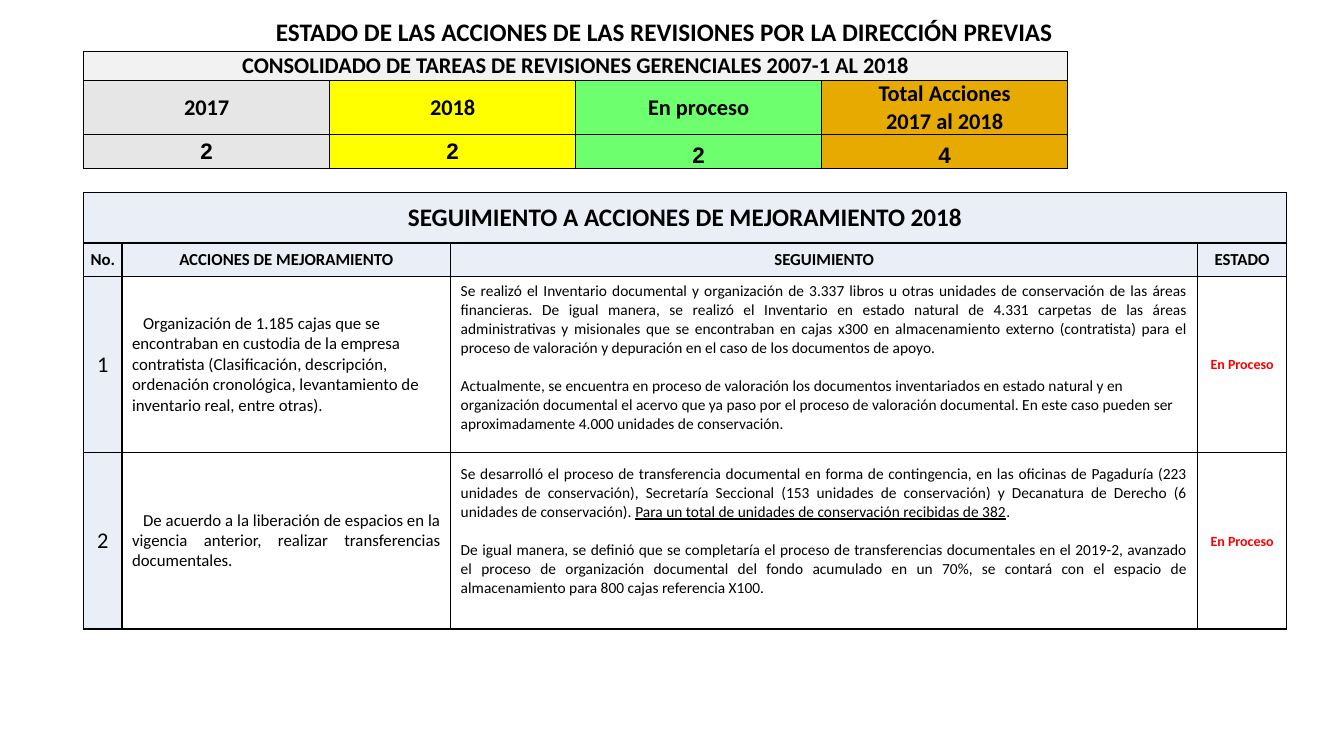
"""Build the slide on the state of actions from previous management reviews."""
from lxml import etree
from pptx import Presentation
from pptx.dml.color import RGBColor
from pptx.enum.text import MSO_ANCHOR, PP_ALIGN
from pptx.oxml.ns import qn
from pptx.util import Inches, Pt

CENTER, LEFT, JUSTIFY = PP_ALIGN.CENTER, PP_ALIGN.LEFT, PP_ALIGN.JUSTIFY
MIDDLE, BOTTOM = MSO_ANCHOR.MIDDLE, MSO_ANCHOR.BOTTOM
COLORS = {
    "black": "000000", "white": "FFFFFF", "red": "FF0000", "light": "F2F2F2",
    "gray": "E7E6E6", "yellow": "FFFF00", "green": "6DFF6D",
    "amber": "E6AA00", "blue": "EAEFF7",
}
GRID_LEFT = 0.83
FLUSH = (0, 0, 0, 0)
THIN = (0.01, 0.01, 0.01, 0)
BODY = (0.1, 0.05, 0.1, 0.05)


def write(tf, paragraphs, size, bold=True, color="black", font="Calibri",
          align=CENTER, indent=0, gap=0):
    for i, runs in enumerate(paragraphs):
        p = tf.paragraphs[0] if i == 0 else tf.add_paragraph()
        p.alignment = align
        if indent:
            p._p.get_or_add_pPr().set("indent", str(Inches(indent)))
        if i and gap:
            p.space_before = Pt(gap)
        for text in [runs] if isinstance(runs, str) else runs:
            r = p.add_run()
            r.text = text
            r.font.name, r.font.size, r.font.bold = font, Pt(size), bold
            r.font.color.rgb = RGBColor.from_string(COLORS[color])
    return tf


def style_cell(cell, fill, margins, anchor=MIDDLE):
    cell.margin_left, cell.margin_top, cell.margin_right, cell.margin_bottom = map(Inches, margins)
    cell.vertical_anchor = anchor
    pr = cell._tc.get_or_add_tcPr()
    for side in ("a:lnL", "a:lnR", "a:lnT", "a:lnB"):
        ln = etree.SubElement(pr, qn(side), w=str(Pt(1)))
        line_fill = etree.SubElement(ln, qn("a:solidFill"))
        etree.SubElement(line_fill, qn("a:srgbClr"), val=COLORS["black"])
    cell.fill.solid()
    cell.fill.fore_color.rgb = RGBColor.from_string(COLORS[fill])
    return cell.text_frame


prs = Presentation()
prs.slide_width, prs.slide_height = Inches(13.33), Inches(7.5)
s = prs.slides.add_slide(prs.slide_layouts[6])

sp = s.shapes.add_textbox(Inches(1.11), Inches(0.11), Inches(10.96), Inches(0.4))
sp.text_frame.word_wrap = True
write(sp.text_frame, ["ESTADO DE LAS ACCIONES DE LAS REVISIONES POR LA DIRECCIÓN PREVIAS"], 18)

tables = []
for top, widths, heights in (
    (0.51, [2.44] * 4, [0.29, 0.53, 0.34]),
    (1.91, [0.38, 3.26, 7.41, 0.88], [0.5, 0.33, 1.75, 1.75]),
):
    table = s.shapes.add_table(
        len(heights), len(widths), Inches(GRID_LEFT), Inches(top),
        Inches(sum(widths)), Inches(sum(heights))).table
    table.first_row = table.horz_banding = False
    for column, width in zip(table.columns, widths):
        column.width = Inches(width)
    for row, height in zip(table.rows, heights):
        row.height = Inches(height)
    table.cell(0, 0).merge(table.cell(0, 3))
    tables.append(table)
summary, tracking = tables

for table, title, size, fill, margins in (
    (summary, "CONSOLIDADO DE TAREAS DE REVISIONES GERENCIALES 2007-1 AL 2018", 16, "light", FLUSH),
    (tracking, "SEGUIMIENTO A ACCIONES DE MEJORAMIENTO 2018", 18, "blue", THIN),
):
    for col in range(4):
        style_cell(table.cell(0, col), fill, margins)
    write(table.cell(0, 0).text_frame, [title], size)

totals = [
    (["2017"], "2", "gray", MIDDLE),
    (["2018"], "2", "yellow", MIDDLE),
    (["En proceso"], "2", "green", BOTTOM),
    (["Total Acciones", "2017 al 2018"], "4", "amber", BOTTOM),
]
for col, (heading, value, fill, anchor) in enumerate(totals):
    write(style_cell(summary.cell(1, col), fill, FLUSH), heading, 16)
    write(style_cell(summary.cell(2, col), fill, FLUSH, anchor), [value], 16, font="Arial")

for col, heading in enumerate(["No.", "ACCIONES DE MEJORAMIENTO", "SEGUIMIENTO", "ESTADO"]):
    write(style_cell(tracking.cell(1, col), "blue", THIN), [heading], 12)

actions = [
    ("Organización de 1.185 cajas que se encontraban en custodia de la empresa contratista "
     "(Clasificación, descripción, ordenación cronológica, levantamiento de inventario real, "
     "entre otras).", LEFT,
     ["Se realizó el Inventario documental y organización de 3.337 libros u otras unidades de "
      "conservación de las áreas financieras. De igual manera, se realizó el Inventario en estado "
      "natural de 4.331 carpetas de las áreas administrativas y misionales que se encontraban en "
      "cajas x300 en almacenamiento externo (contratista) para el proceso de valoración y "
      "depuración en el caso de los documentos de apoyo.",
      "Actualmente, se encuentra en proceso de valoración los documentos inventariados en estado "
      "natural y en organización documental el acervo que ya paso por el proceso de valoración "
      "documental. En este caso pueden ser aproximadamente 4.000 unidades de conservación."],
     LEFT, 0.19),
    ("De acuerdo a la liberación de espacios en la vigencia anterior, realizar transferencias "
     "documentales.", JUSTIFY,
     [["Se desarrolló el proceso de transferencia documental en forma de contingencia, en las "
       "oficinas de Pagaduría (223 unidades de conservación), Secretaría Seccional (153 unidades "
       "de conservación) y Decanatura de Derecho (6 unidades de conservación). ",
       "Para un total de unidades de conservación recibidas de 382", "."],
      "De igual manera, se definió que se completaría el proceso de transferencias documentales "
      "en el 2019-2, avanzado el proceso de organización documental del fondo acumulado en un "
      "70%, se contará con el espacio de almacenamiento para 800 cajas referencia X100."],
     JUSTIFY, 0.24),
]
for number, (action, align, progress, last_align, bottom) in enumerate(actions, 1):
    no, task, detail, status = tracking.rows[number + 1].cells
    write(style_cell(no, "blue", THIN), [str(number)], 16, bold=False)
    write(style_cell(task, "white", BODY), [action], 12, bold=False, align=align, indent=0.11)
    tf = style_cell(detail, "white", BODY[:3] + (bottom,))
    write(tf, progress, 11, bold=False, align=JUSTIFY, gap=13.4)
    tf.paragraphs[-1].alignment = last_align
    write(style_cell(status, "white", THIN), ["En Proceso"], 10, color="red")
tracking.cell(3, 2).text_frame.paragraphs[0].runs[1].font.underline = True

prs.save("out.pptx")
